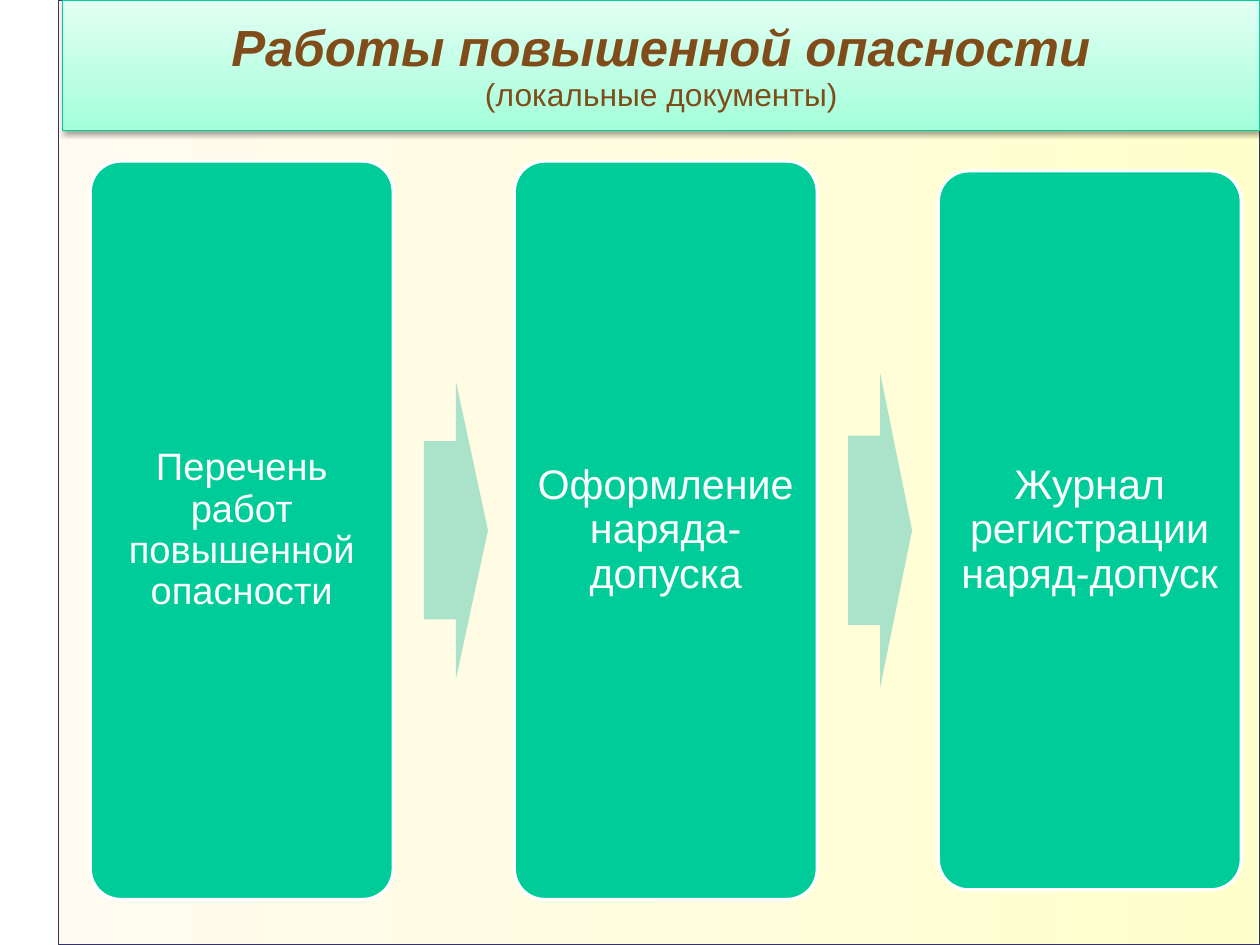
from lxml.etree import SubElement
from pptx import Presentation
from pptx.dml.color import RGBColor
from pptx.enum.shapes import MSO_SHAPE
from pptx.enum.text import MSO_ANCHOR, PP_ALIGN
from pptx.oxml.ns import qn
from pptx.util import Cm, Inches, Pt

TITLE = [("Работы повышенной опасности", 32, True), (" (локальные документы) ", 20, False)]
STEPS = [
    ("Перечень работ повышенной опасности", 24, 6.46),
    ("Оформление наряда-допуска", 26, 6.46),
    ("Журнал регистрации наряд-допуск", 26, 6.29),
]
ARROW_HEIGHTS = [2.6, 2.76]
COLORS = {
    "cream": "FFFBF0", "yellow": "FFFFCC", "navy": "333366",
    "mint_light": "E3FFF4", "mint": "A3FFDA", "green": "00CC99",
    "arrow": "ABE2CA", "brown": "804C19", "white": "FFFFFF", "shadow": "000000",
}
FONT = "Arial"
SLIDE_WIDTH, SLIDE_HEIGHT = Cm(28), Cm(21)
WIDTH, HEIGHT = SLIDE_WIDTH.inches, SLIDE_HEIGHT.inches
PANEL_LEFT, TITLE_LEFT, TITLE_HEIGHT = 0.51, 0.55, 1.14
STEP_LEFT, STEP_WIDTH, PITCH, MIDDLE = 0.79, 2.65, 3.71, 4.64
ARROW_GAP, ARROW_WIDTH = 0.27, 0.56


def rgb(name):
    return RGBColor.from_string(COLORS[name])


def add_box(s, kind, left, top, width, height, fill, line=None, weight=0.75, adj=()):
    sp = s.shapes.add_shape(kind, Inches(left), Inches(top), Inches(width), Inches(height))
    sp.shadow.inherit = False
    for i, value in enumerate(adj):
        sp.adjustments[i] = value
    if isinstance(fill, tuple):
        start, end, angle = fill
        sp.fill.gradient()
        sp.fill.gradient_angle = angle
        for stop, name in zip(sp.fill.gradient_stops, (start, end)):
            stop.color.rgb = rgb(name)
    else:
        sp.fill.solid()
        sp.fill.fore_color.rgb = rgb(fill)
    if line:
        sp.line.color.rgb = rgb(line)
        sp.line.width = Pt(weight)
    else:
        sp.line.fill.background()
    return sp


def set_frame(sp, left, top, right, bottom):
    tf = sp.text_frame
    tf.word_wrap = True
    tf.vertical_anchor = MSO_ANCHOR.MIDDLE
    tf.margin_left, tf.margin_top = Inches(left), Inches(top)
    tf.margin_right, tf.margin_bottom = Inches(right), Inches(bottom)
    p = tf.paragraphs[0]
    p.alignment = PP_ALIGN.CENTER
    p.font.name = FONT
    return p


def add_drop_shadow(sp):
    effects = sp._element.spPr.find(qn("a:effectLst"))
    shadow = SubElement(effects, qn("a:outerShdw"), blurRad="40000", dist="23000",
                        dir="5400000", rotWithShape="0")
    color = SubElement(shadow, qn("a:srgbClr"), val=COLORS["shadow"])
    SubElement(color, qn("a:alpha"), val="35000")


def add_title(s):
    sp = add_box(s, MSO_SHAPE.RECTANGLE, TITLE_LEFT, 0, WIDTH - TITLE_LEFT, TITLE_HEIGHT,
                 ("mint_light", "mint", 270), "green")
    add_drop_shadow(sp)
    p = set_frame(sp, 0, 0.04, 0, 0)
    p.line_spacing = 0.93
    for i, (text, size, strong) in enumerate(TITLE):
        if i:
            p.add_line_break()
        r = p.add_run()
        r.text = text
        r.font.name = FONT
        r.font.size = Pt(size)
        r.font.bold = r.font.italic = strong
        r.font.color.rgb = rgb("brown")


def add_steps(s):
    for i, (text, size, height) in enumerate(STEPS):
        left = STEP_LEFT + i * PITCH
        sp = add_box(s, MSO_SHAPE.ROUNDED_RECTANGLE, left, MIDDLE - height / 2,
                     STEP_WIDTH, height, "green", "white", 2, (0.1,))
        p = set_frame(sp, 0.05, 0.05, 0.05, 0.05)
        p.text = text
        p.line_spacing = 0.9
        p.font.size = Pt(size)
        p.font.color.rgb = rgb("white")
    for i, height in enumerate(ARROW_HEIGHTS):
        left = STEP_LEFT + i * PITCH + STEP_WIDTH + ARROW_GAP
        add_box(s, MSO_SHAPE.RIGHT_ARROW, left, MIDDLE - height / 2,
                ARROW_WIDTH, height, "arrow", adj=(0.6, 0.5))


def main():
    prs = Presentation()
    prs.slide_width, prs.slide_height = SLIDE_WIDTH, SLIDE_HEIGHT
    prs.element.find(qn("p:sldSz")).attrib.pop("type", None)
    s = prs.slides.add_slide(prs.slide_layouts[6])
    add_box(s, MSO_SHAPE.RECTANGLE, PANEL_LEFT, 0, WIDTH - PANEL_LEFT, HEIGHT,
            ("cream", "yellow", 0), "navy")
    add_title(s)
    add_steps(s)
    prs.save("out.pptx")


if __name__ == "__main__":
    main()
